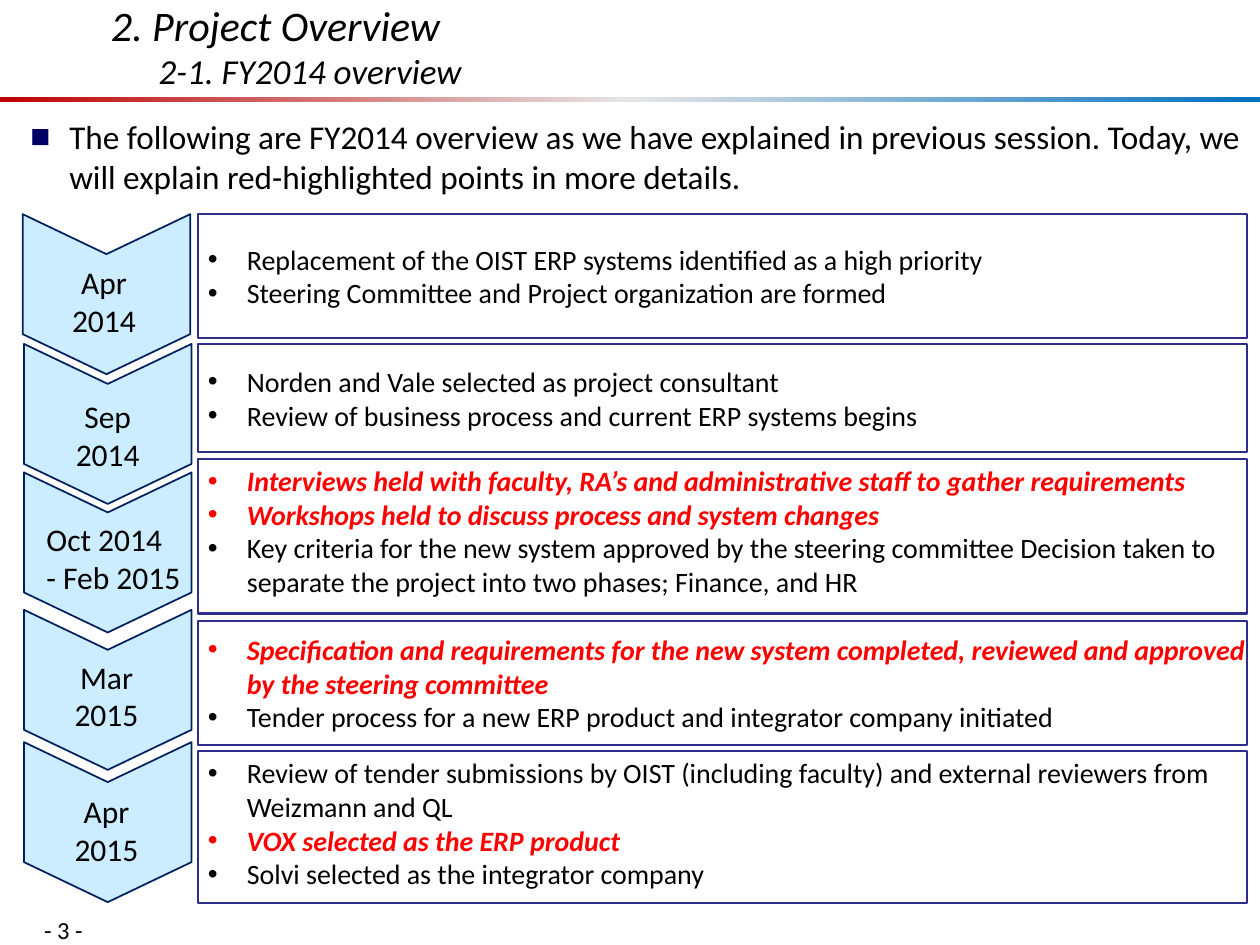
"""Builds the FY2014 project overview slide."""
from dataclasses import dataclass

from lxml import etree
from pptx import Presentation
from pptx.dml.color import RGBColor
from pptx.enum.shapes import MSO_SHAPE
from pptx.enum.text import MSO_ANCHOR, MSO_AUTO_SIZE, PP_ALIGN
from pptx.oxml.ns import qn
from pptx.util import Inches, Pt

BAR, BOX, ARROW = MSO_SHAPE.RECTANGLE, MSO_SHAPE.ROUNDED_RECTANGLE, MSO_SHAPE.CHEVRON
TOP, MIDDLE, BOTTOM = MSO_ANCHOR.TOP, MSO_ANCHOR.MIDDLE, MSO_ANCHOR.BOTTOM
LEFT, CENTER = PP_ALIGN.LEFT, PP_ALIGN.CENTER
NO_FIT = MSO_AUTO_SIZE.NONE


@dataclass(frozen=True)
class Theme:
    """Colours, type sizes and font of the slide."""
    font: str = "Calibri"
    ink: str = "000000"
    alert: str = "FF0000"
    paper: str = "FFFFFF"
    frame: str = "2D2D8A"
    sky: str = "CCECFF"
    navy: str = "002060"
    mark: str = "000066"
    fade: tuple = (("C00000", 0), ("E6E6E6", 50), ("0070C0", 100))
    title: int = 24
    sub: int = 20
    lead: int = 19
    date: int = 18
    item: int = 16
    foot: int = 14


THEME = Theme()
LEAD = ("The following are FY2014 overview as we have explained in previous session. "
        "Today, we will explain red-highlighted points in more details.")

# Each stage: box top, box height, anchor, items as (text, is red).
BOXES = (
    (1.7, 0.98, MIDDLE, (
        ("Replacement of the OIST ERP systems identified as a high priority", False),
        ("Steering Committee and Project organization are formed", False))),
    (2.73, 0.86, MIDDLE, (
        ("Norden and Vale selected as project consultant", False),
        ("Review of business process and current ERP systems begins", False))),
    (3.64, 1.23, TOP, (
        ("Interviews held with faculty, RA’s and administrative staff to gather "
         "requirements", True),
        ("Workshops held to discuss process and system changes", True),
        ("Key criteria for the new system approved by the steering committee Decision "
         "taken to separate the project into two phases; Finance, and HR", False))),
    (4.93, 0.98, MIDDLE, (
        ("Specification and requirements for the new system completed, reviewed and "
         "approved by the steering committee", True),
        ("Tender process for a new ERP product and integrator company initiated", False))),
    (5.96, 1.21, TOP, (
        ("Review of tender submissions by OIST (including faculty) and external "
         "reviewers from Weizmann and QL", False),
        ("VOX selected as the ERP product", True),
        ("Solvi selected as the integrator company", False))),
)

# Each date: arrow left, arrow top, label left, label top, label width, lines, alignment.
DATES = (
    (0.21, 1.67, 0.22, 2.04, 1.21, ("Apr", "2014"), CENTER),
    (0.22, 2.7, 0.25, 3.1, 1.21, ("Sep", "2014"), CENTER),
    (0.22, 3.72, 0.27, 4.08, 1.28, ("Oct 2014", "- Feb 2015"), LEFT),
    (0.22, 4.81, 0.24, 5.17, 1.21, ("Mar", "2015"), CENTER),
    (0.22, 5.86, 0.24, 6.24, 1.21, ("Apr", "2015"), CENTER),
)


def place(shape, *area):
    """Set a shape's left, top, width and height in inches."""
    shape.left, shape.top, shape.width, shape.height = map(Inches, area)


def set_frame(shape, anchor=TOP, pads=(0, 0, 0, 0), wrap=True):
    """Prepare a shape's text frame and return it."""
    frame = shape.text_frame
    frame.auto_size, frame.word_wrap, frame.vertical_anchor = NO_FIT, wrap, anchor
    (frame.margin_left, frame.margin_top,
     frame.margin_right, frame.margin_bottom) = map(Inches, pads)
    return frame


def next_para(frame, first):
    """Return the frame's first paragraph or a new one."""
    return frame.paragraphs[0] if first else frame.add_paragraph()


def add_run(para, text, size, color=THEME.ink, bold=False, italic=False):
    """Add one styled run to a paragraph."""
    run = para.add_run()
    run.text = text
    font = run.font
    font.name, font.size, font.bold, font.italic = THEME.font, Pt(size), bold, italic
    font.color.rgb = RGBColor.from_string(color)


def hang(para, size, sign=None, color=None):
    """Give a paragraph a hanging indent and an optional bullet."""
    props = para._p.get_or_add_pPr()
    props.set("marL", str(Inches(size)))
    props.set("indent", str(-Inches(size)))
    if color:
        tint = etree.SubElement(props, qn("a:buClr"))
        etree.SubElement(tint, qn("a:srgbClr"), val=color)
    if sign:
        etree.SubElement(props, qn("a:buFont"), typeface="Arial")
        etree.SubElement(props, qn("a:buChar"), char=sign)
    else:
        etree.SubElement(props, qn("a:buNone"))


def add_form(slide, kind, area, fill, line, width, adjust):
    """Add a filled and outlined preset shape."""
    shape = slide.shapes.add_shape(kind, *map(Inches, area))
    shape.shadow.inherit = False
    shape.fill.solid()
    shape.fill.fore_color.rgb = RGBColor.from_string(fill)
    shape.line.color.rgb = RGBColor.from_string(line)
    shape.line.width = Pt(width)
    shape.adjustments[0] = adjust
    return shape


def add_bar(slide):
    """Add the gradient rule below the title."""
    bar = slide.shapes.add_shape(BAR, *map(Inches, (0, 0.77, 10, 0.04)))
    bar.shadow.inherit = False
    bar.line.fill.background()
    bar.fill.gradient()
    bar.fill.gradient_angle = 0
    stops = bar.fill._fill._gradFill.find(qn("a:gsLst"))
    for stop in list(stops):
        stops.remove(stop)
    for color, spot in THEME.fade:
        stop = etree.SubElement(stops, qn("a:gs"), pos=str(spot * 1000))
        etree.SubElement(stop, qn("a:srgbClr"), val=color)


def add_title(slide):
    """Fill the title placeholder with its two lines."""
    title = slide.shapes.title
    place(title, 0.88, 0.1, 7.94, 0.63)
    para = set_frame(title, BOTTOM).paragraphs[0]
    hang(para, 0.38)
    para.alignment = LEFT
    add_run(para, "2. Project Overview", THEME.title, italic=True)
    para.add_line_break()
    add_run(para, "2-1. FY2014 overview", THEME.sub, italic=True)


def add_label(slide, area, lines, size, align=LEFT, pads=(0, 0, 0, 0), wrap=True):
    """Add a text box with one paragraph per line."""
    frame = set_frame(slide.shapes.add_textbox(*map(Inches, area)), TOP, pads, wrap)
    for index, text in enumerate(lines):
        para = next_para(frame, index == 0)
        para.alignment = align
        add_run(para, text, size)
    return frame


def add_box(slide, top, height, anchor, items):
    """Add a framed box with its bulleted items."""
    box = add_form(slide, BOX, (1.57, top, 8.33, height),
                   THEME.paper, THEME.frame, 1.25, 0)
    frame = set_frame(box, anchor, (0.08, 0.04, 0, 0.04))
    for index, (text, red) in enumerate(items):
        para = next_para(frame, index == 0)
        hang(para, 0.31, "•")
        para.alignment = LEFT
        add_run(para, text, THEME.item, THEME.alert if red else THEME.ink, red, red)


def main():
    """Build and save the slide."""
    deck = Presentation()
    deck.slide_width, deck.slide_height = Inches(10), Inches(7.5)
    slide = deck.slides.add_slide(deck.slide_layouts[5])
    add_label(slide, (0.35, 7.26, 1.42, 0.3), ("- 3 -",), THEME.foot)
    add_bar(slide)
    add_title(slide)
    for box in BOXES:
        add_box(slide, *box)
    for left, top, *_ in DATES:
        arrow = add_form(slide, ARROW, (left, top, 1.27, 1.33),
                         THEME.sky, THEME.navy, 1, 0.25)
        arrow.rotation = 90
    for _, _, left, top, width, lines, align in DATES:
        add_label(slide, (left, top, width, 0.71), lines, THEME.date, align,
                  (0.1, 0.05, 0.1, 0.05), False)
    lead = add_label(slide, (0.24, 0.92, 9.62, 0.64), (LEAD,), THEME.lead)
    hang(lead.paragraphs[0], 0.31, "■", THEME.mark)
    deck.save("out.pptx")


if __name__ == "__main__":
    main()
